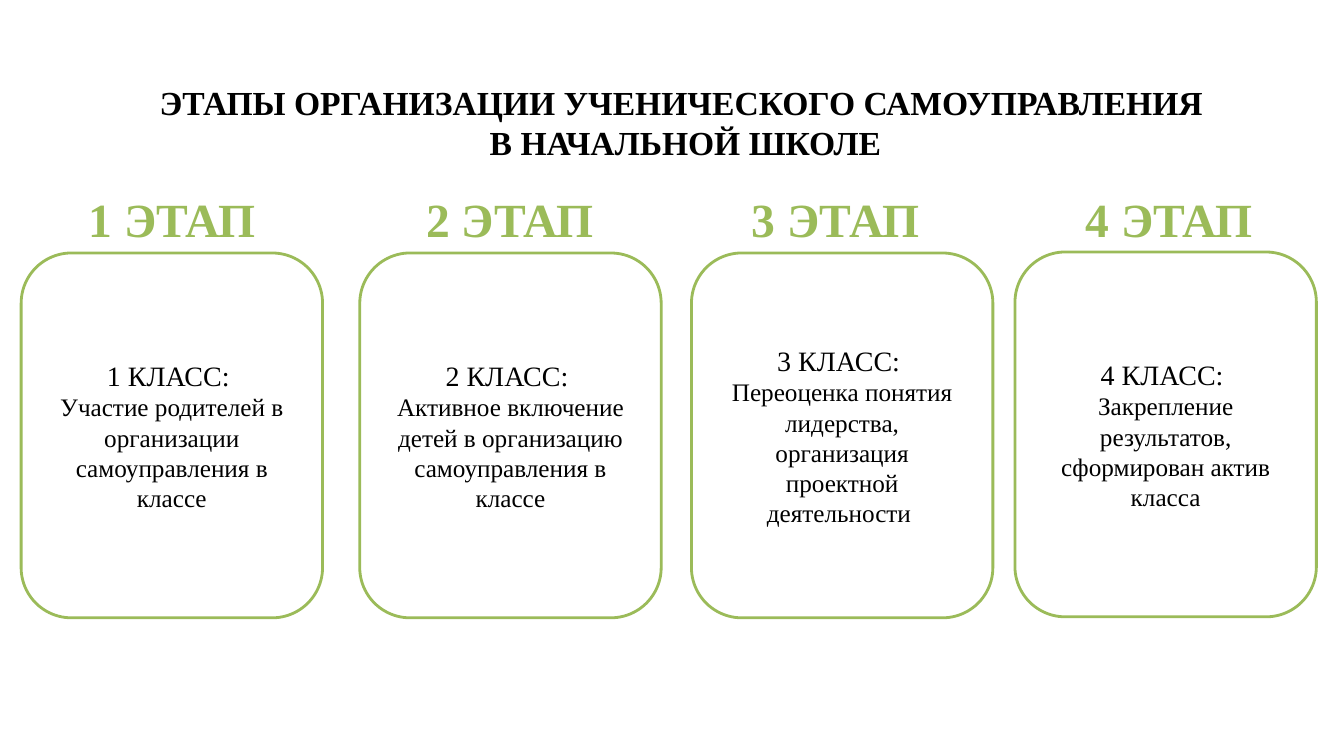
"""Build a slide with the four stages of pupil self-government in primary school."""
from pptx import Presentation
from pptx.dml.color import RGBColor
from pptx.enum import shapes, text
from pptx.util import Pt

COLOURS = {"black": "000000", "green": "9BBB59", "white": "FFFFFF"}
FONT = "Times New Roman"
TITLE = ["ЭТАПЫ ОРГАНИЗАЦИИ УЧЕНИЧЕСКОГО САМОУПРАВЛЕНИЯ ", "В НАЧАЛЬНОЙ ШКОЛЕ"]
CARD_WIDTH, CARD_HEIGHT = 215.3, 260.6
LABEL_TOP, LABEL_WIDTH, LABEL_HEIGHT = 132.5, 135.4, 48.2
STAGES = [
    (15.1, 180.7, 55.4, "Участие родителей в организации самоуправления в классе"),
    (257, 180.7, 296.6, "Активное включение детей в организацию самоуправления в классе"),
    (493.9, 180.7, 529.2, "Переоценка понятия лидерства, организация проектной деятельности "),
    (725, 180, 767.5, "Закрепление результатов, сформирован актив класса"),
]


def colour(name):
    """Return the named colour."""
    return RGBColor.from_string(COLOURS[name])


def write_lines(frame, lines, colour_name="black", bold=False):
    """Write centred paragraphs from pairs of wording and point size."""
    for index, (wording, size) in enumerate(lines):
        paragraph = frame.add_paragraph() if index else frame.paragraphs[0]
        paragraph.alignment = text.PP_ALIGN.CENTER
        run = paragraph.add_run()
        run.text = wording
        for name, value in {"name": FONT, "size": Pt(size), "bold": bold}.items():
            setattr(run.font, name, value)
        run.font.color.rgb = colour(colour_name)


def add_heading(slide, box, lines, colour_name, wrap):
    """Add a bold text box that grows with its text."""
    frame = slide.shapes.add_textbox(*map(Pt, box)).text_frame
    settings = {"word_wrap": wrap, "auto_size": text.MSO_AUTO_SIZE.SHAPE_TO_FIT_TEXT}
    for name, value in settings.items():
        setattr(frame, name, value)
    write_lines(frame, lines, colour_name, bold=True)


def add_card(slide, left, top, lines):
    """Add a white rounded card with a green outline."""
    shape = slide.shapes.add_shape(
        shapes.MSO_SHAPE.ROUNDED_RECTANGLE,
        *map(Pt, (left, top, CARD_WIDTH, CARD_HEIGHT)))
    shape.shadow.inherit = False
    shape.fill.solid()
    shape.fill.fore_color.rgb = colour("white")
    shape.line.color.rgb = colour("green")
    shape.line.width = Pt(2)
    settings = {"word_wrap": True, "vertical_anchor": text.MSO_ANCHOR.MIDDLE}
    for name, value in settings.items():
        setattr(shape.text_frame, name, value)
    write_lines(shape.text_frame, lines)


def main():
    """Build and save the presentation."""
    presentation = Presentation()
    presentation.slide_width, presentation.slide_height = Pt(960), Pt(540)
    slide = presentation.slides.add_slide(presentation.slide_layouts[6])
    add_heading(slide, (72.7, 54.7, 833.8, 65.5),
                [(line, 24) for line in TITLE], "black", True)
    for number, (left, top, label_left, task) in enumerate(STAGES, 1):
        add_card(slide, left, top, [(f"{number} КЛАСС: ", 20), (task, 18)])
        add_heading(slide, (label_left, LABEL_TOP, LABEL_WIDTH, LABEL_HEIGHT),
                    [(f"{number} ЭТАП", 34)], "green", False)
    presentation.save("out.pptx")


if __name__ == "__main__":
    main()
